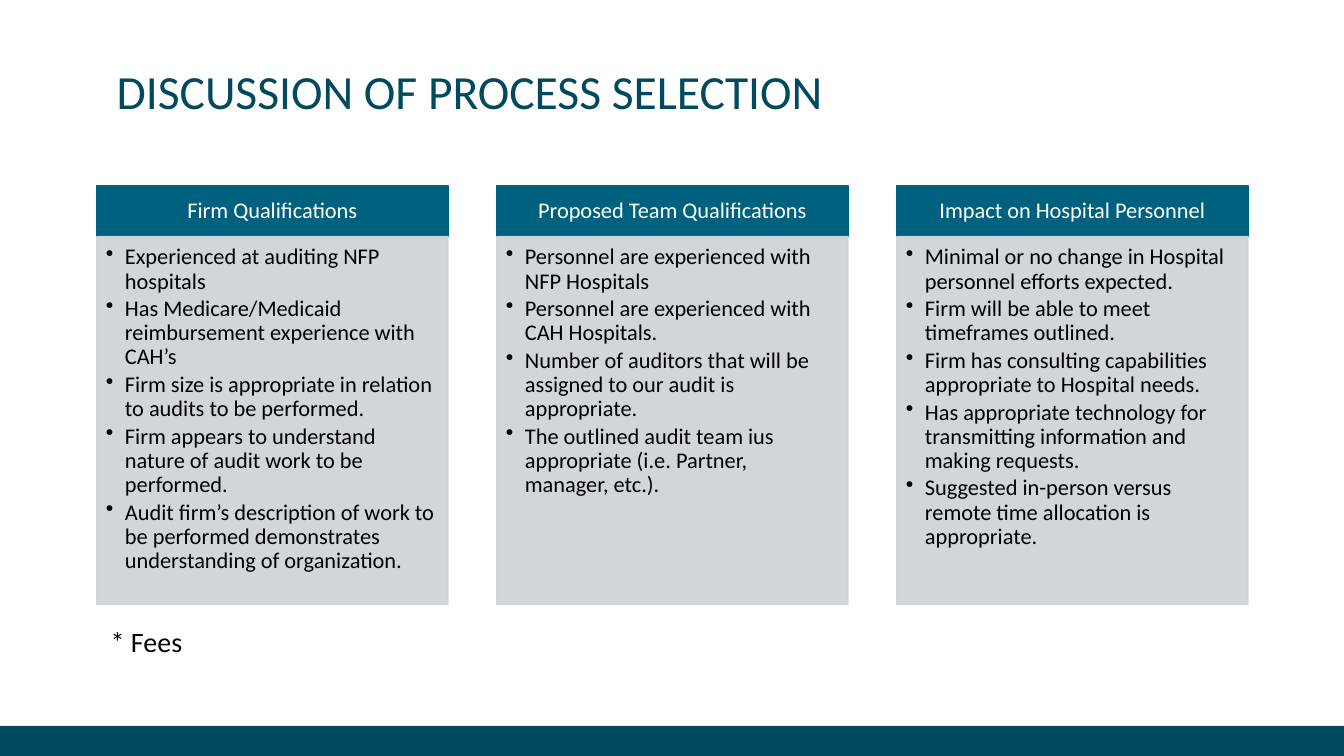
import pptx
import pptx.util
import pptx.dml.color
import pptx.enum.shapes
import pptx.enum.text
import pptx.oxml.ns
import lxml.etree
from dataclasses import dataclass

Cm, Pt = pptx.util.Cm, pptx.util.Pt
Align, Anchor = pptx.enum.text.PP_ALIGN, pptx.enum.text.MSO_ANCHOR

HEADING = "DISCUSSION OF PROCESS SELECTION"
CRITERIA = {
    "Firm Qualifications": [
        "Experienced at auditing NFP hospitals",
        "Has Medicare/Medicaid reimbursement experience with CAH’s",
        "Firm size is appropriate in relation to audits to be performed.",
        "Firm appears to understand nature of audit work to be performed.",
        "Audit firm’s description of work to be performed demonstrates understanding of organization.",
    ],
    "Proposed Team Qualifications": [
        "Personnel are experienced with NFP Hospitals",
        "Personnel are experienced with CAH Hospitals.",
        "Number of auditors that will be assigned to our audit is appropriate.",
        "The outlined audit team ius appropriate (i.e. Partner, manager, etc.).",
    ],
    "Impact on Hospital Personnel": [
        "Minimal or no change in Hospital personnel efforts expected.",
        "Firm will be able to meet timeframes outlined.",
        "Firm has consulting capabilities appropriate to Hospital needs.",
        "Has appropriate technology for transmitting information and making requests.",
        "Suggested in-person versus remote time allocation is appropriate.",
    ],
}
FEES = "* Fees"


@dataclass(frozen=True)
class Theme:
    font: str = "Calibri"
    dark: str = "00495F"
    teal: str = "00617F"
    panel: str = "CCD2D8"
    black: str = "000000"
    white: str = "FFFFFF"
    panel_opacity: int = 90
    heading_size: int = 34
    fees_size: int = 20
    column_size: int = 16
    line_spacing: float = 0.9


THEME = Theme()
SLIDE_W, SLIDE_H, FOOTER_H = 33.87, 19.05, 0.76
COLUMN_LEFT, COLUMN_W, COLUMN_GAP = 2.44, 8.85, 1.23
HEADER_TOP, HEADER_H, PANEL_H = 4.67, 1.29, 9.27
BULLET_INDENT = 0.48


def rgb(value):
    return pptx.dml.color.RGBColor.from_string(value)


def set_opacity(fill_parent, percent):
    for color in fill_parent.iter(pptx.oxml.ns.qn("a:srgbClr")):
        alpha = lxml.etree.SubElement(color, pptx.oxml.ns.qn("a:alpha"))
        alpha.set("val", str(percent * 1000))


def add_block(slide, left, top, width, height, color):
    block = slide.shapes.add_shape(
        pptx.enum.shapes.MSO_SHAPE.RECTANGLE, Cm(left), Cm(top), Cm(width), Cm(height))
    block.shadow.inherit = False
    block.fill.solid()
    block.fill.fore_color.rgb = rgb(color)
    block.line.color.rgb = rgb(color)
    block.line.width = Pt(1)
    return block


def place(holder, left, top, width, height):
    holder.left, holder.top = Cm(left), Cm(top)
    holder.width, holder.height = Cm(width), Cm(height)


def write(holder, lines, size, color, align, anchor, insets, space_after=0):
    frame = holder.text_frame
    frame.text = "\n".join(lines)
    frame.word_wrap = True
    frame.auto_size = pptx.enum.text.MSO_AUTO_SIZE.NONE
    frame.vertical_anchor = anchor
    frame.margin_left, frame.margin_top, frame.margin_right, frame.margin_bottom = map(Cm, insets)
    for paragraph in frame.paragraphs:
        paragraph.font.name = THEME.font
        paragraph.font.size = Pt(size)
        paragraph.font.color.rgb = rgb(color)
        paragraph.alignment = align
        paragraph.line_spacing = THEME.line_spacing
        paragraph.space_before = Pt(0)
        paragraph.space_after = Pt(space_after)


def set_bullets(holder, margin, indent, bullet=None):
    for paragraph in holder.text_frame.paragraphs:
        properties = paragraph._p.get_or_add_pPr()
        properties.set("marL", str(Cm(margin)))
        properties.set("indent", str(Cm(indent)))
        tag = "a:buChar" if bullet else "a:buNone"
        mark = lxml.etree.Element(pptx.oxml.ns.qn(tag))
        if bullet:
            mark.set("char", bullet)
        properties.find(pptx.oxml.ns.qn("a:spcAft")).addnext(mark)


def add_column(slide, left, header_text, points):
    header = add_block(slide, left, HEADER_TOP, COLUMN_W, HEADER_H, THEME.teal)
    write(header, [header_text], THEME.column_size, THEME.white, Align.CENTER,
          Anchor.MIDDLE, (0.3, 0.18, 0.3, 0.18))
    panel = add_block(slide, left, HEADER_TOP + HEADER_H, COLUMN_W, PANEL_H, THEME.panel)
    set_opacity(panel._element.spPr, THEME.panel_opacity)
    write(panel, points, THEME.column_size, THEME.black, Align.LEFT,
          Anchor.TOP, (0.23, 0.23, 0.3, 0.36), space_after=2.4)
    set_bullets(panel, BULLET_INDENT, -BULLET_INDENT, "•")


def main():
    deck = pptx.Presentation()
    deck.slide_width, deck.slide_height = Cm(SLIDE_W), Cm(SLIDE_H)
    slide = deck.slides.add_slide(deck.slide_layouts[1])

    add_block(slide, 0, SLIDE_H - FOOTER_H, SLIDE_W, FOOTER_H, THEME.dark).line.fill.background()

    heading = slide.shapes.title
    place(heading, 2.69, 1.3, 25.4, 3.18)
    write(heading, [HEADING], THEME.heading_size, THEME.dark, Align.LEFT,
          Anchor.BOTTOM, (0.25, 0.13, 0.25, 1.45))

    for index, (header_text, points) in enumerate(CRITERIA.items()):
        add_column(slide, COLUMN_LEFT + index * (COLUMN_W + COLUMN_GAP), header_text, points)

    fees = slide.placeholders[1]
    place(fees, 2.41, 15.7, 25.4, 2.4)
    write(fees, [FEES], THEME.fees_size, THEME.black, Align.LEFT,
          Anchor.TOP, (0.25, 0.13, 0.25, 0.13))
    set_bullets(fees, 0.13, 0)

    deck.save("out.pptx")


if __name__ == "__main__":
    main()
